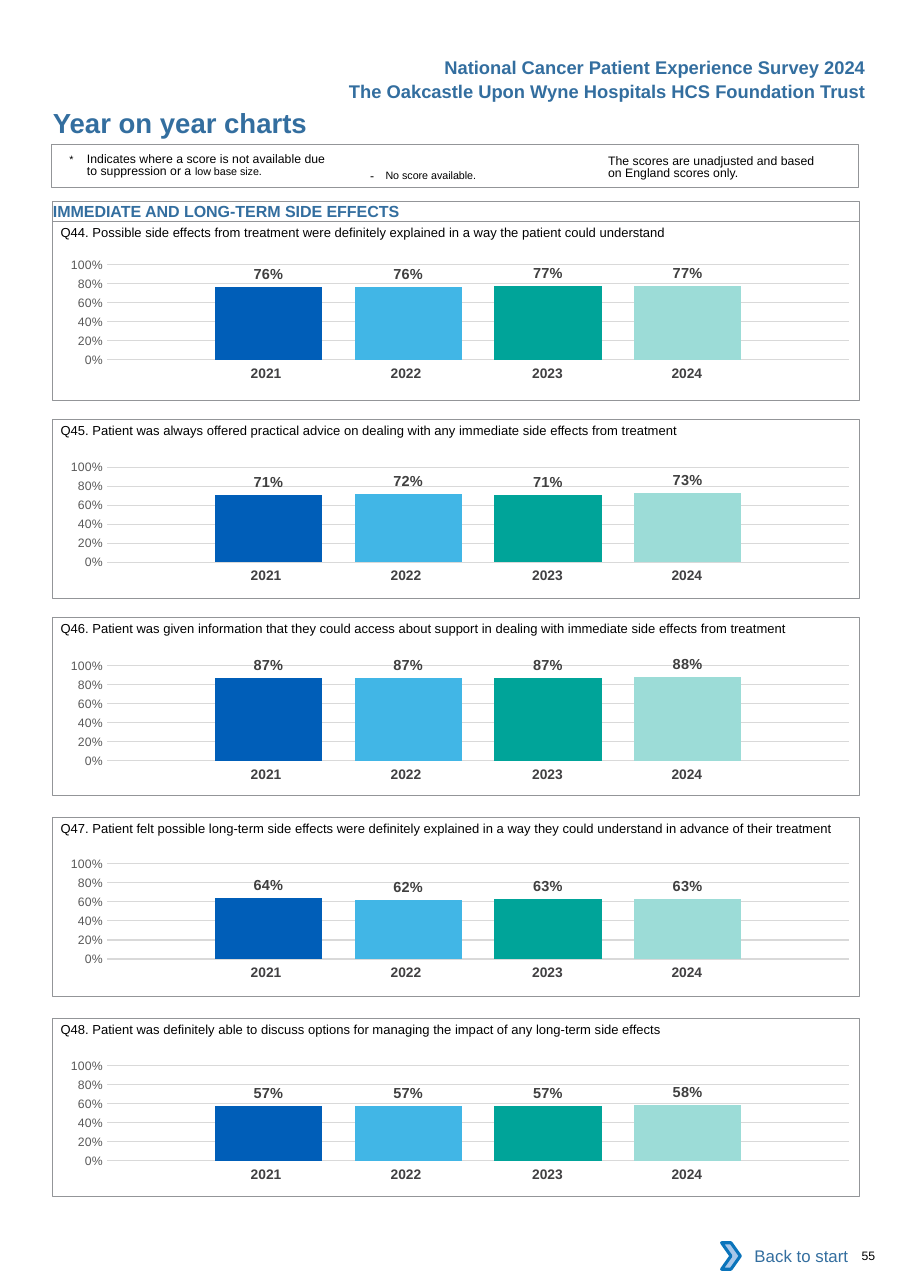
from lxml import etree
from pptx import Presentation
from pptx.chart.data import CategoryChartData
from pptx.dml.color import RGBColor
from pptx.enum.chart import XL_CHART_TYPE as ChartType, XL_LABEL_POSITION as LabelPosition
from pptx.enum.chart import XL_TICK_MARK as TickMark
from pptx.enum.shapes import MSO_SHAPE as Preset
from pptx.enum.text import MSO_ANCHOR as Anchor, PP_ALIGN as Align
from pptx.oxml.ns import qn
from pptx.util import Inches, Pt

BLUE = RGBColor(0x33, 0x6E, 0x9F)
BLACK = RGBColor(0, 0, 0)
WHITE = RGBColor(0xFF, 0xFF, 0xFF)
FRAME_GREY = RGBColor(0x93, 0x95, 0x98)
YEAR_GREY = RGBColor(0x41, 0x40, 0x42)
LABEL_GREY = RGBColor(0x40, 0x40, 0x40)
AXIS_GREY = RGBColor(0x59, 0x59, 0x59)
GRID_GREY = RGBColor(0xD9, 0xD9, 0xD9)
ARROW_FILL = RGBColor(0xA8, 0xC7, 0xE9)
ARROW_LINE = RGBColor(0x0A, 0x74, 0xBB)
YEAR_COLORS = [RGBColor(0x00, 0x5E, 0xB8), RGBColor(0x41, 0xB6, 0xE6),
               RGBColor(0x00, 0xA4, 0x99), RGBColor(0x9C, 0xDC, 0xD7)]

FRAME_LEFT, FRAME_WIDTH, PANEL_HEIGHT = 0.48, 7.32, 1.62
YEARS = ["2021", "2022", "2023", "2024"]
YEAR_WIDTHS = [1.27, 1.27, 1.34, 1.27]
YEAR_RIGHT_MARGINS = [0, 0, 0.04, 0.12]
NO_STYLE = "{2D5ABB26-0587-4C30-8999-92F81FD0307C}"

# Panel top, chart offset, question, scores by year
PANELS = [
    (2.01, 0.21, "Q44. Possible side effects from treatment were definitely explained "
     "in a way the patient could understand", [0.76, 0.76, 0.77, 0.77]),
    (3.81, 0.25, "Q45. Patient was always offered practical advice on dealing with any "
     "immediate side effects from treatment", [0.71, 0.72, 0.71, 0.73]),
    (5.60, 0.26, "Q46. Patient was given information that they could access about support "
     "in dealing with immediate side effects from treatment", [0.87, 0.87, 0.87, 0.88]),
    (7.42, 0.24, "Q47. Patient felt possible long-term side effects were definitely explained "
     "in a way they could understand in advance of their treatment", [0.64, 0.62, 0.63, 0.63]),
    (9.24, 0.25, "Q48. Patient was definitely able to discuss options for managing the impact "
     "of any long-term side effects", [0.57, 0.57, 0.57, 0.58]),
]


def style_font(font, size, color, bold=False):
    font.name, font.size, font.bold = "Arial", Pt(size), bold
    font.color.rgb = color


def add_text(page, box, spans, color=BLACK, bold=False, align=Align.LEFT,
             anchor=Anchor.MIDDLE, wrap=True):
    """Place one paragraph; spans are (text, size) pairs."""
    frame = page.shapes.add_textbox(*map(Inches, box)).text_frame
    frame.word_wrap, frame.vertical_anchor = wrap, anchor
    frame.margin_left = frame.margin_right = frame.margin_top = frame.margin_bottom = 0
    para = frame.paragraphs[0]
    para.alignment = align
    for text, size in spans:
        span = para.add_run()
        span.text = text
        style_font(span.font, size, color, bold)
    return para


def add_frame(page, box, width=0.5):
    frame = page.shapes.add_shape(Preset.RECTANGLE, *map(Inches, box))
    frame.shadow.inherit = False
    frame.fill.background()
    frame.line.color.rgb = FRAME_GREY
    frame.line.width = Pt(width)


def add_header(page, left, top, width):
    titles = ["National Cancer Patient Experience Survey 2024",
              "The Oakcastle Upon Wyne Hospitals HCS Foundation Trust"]
    for row, title in enumerate(titles):
        add_text(page, (left, top + row * 0.22, width, 0.3), [(title, 12)],
                 BLUE, True, Align.RIGHT, wrap=False)
    add_text(page, (FRAME_LEFT, top + 0.5, 4.5, 0.3), [("Year on year charts", 18)], BLUE, True)


def add_legend(page, left, top, width, height):
    add_frame(page, (left, top, width, height), 0.75)
    suppressed = add_text(page, (left + 0.16, top + 0.08, 2.37, 0.25),
                          [("*\t", 7), ("Indicates where a score is not available due to "
                                        "suppression or a ", 8), ("low base size.", 7)],
                          anchor=Anchor.TOP)
    properties = suppressed._p.get_or_add_pPr()
    properties.set("marL", str(Inches(0.16)))
    properties.set("indent", str(-Inches(0.16)))
    add_text(page, (left + 2.89, top + 0.18, 0.14, 0.2), [("-", 8)])
    add_text(page, (left + 3.03, top + 0.18, 1.5, 0.2), [("No score available.", 7)])
    unadjusted = add_text(page, (left + 5.05, top + 0.1, 1.95, 0.25),
                          [("The scores are unadjusted and based on England scores only.", 8)],
                          anchor=Anchor.TOP)
    for para in (suppressed, unadjusted):
        para.line_spacing = Pt(8.1)


def set_plot_area(chart, x, y, width, height):
    plot_area = chart._chartSpace.chart.plotArea
    for old in plot_area.findall(qn("c:layout")):
        plot_area.remove(old)
    layout = etree.Element(qn("c:layout"))
    manual = etree.SubElement(layout, qn("c:manualLayout"))
    settings = [("layoutTarget", "inner"), ("xMode", "edge"), ("yMode", "edge"),
                ("x", x), ("y", y), ("w", width), ("h", height)]
    for tag, value in settings:
        etree.SubElement(manual, qn("c:" + tag)).set("val", str(value))
    plot_area.insert(0, layout)


def add_score_chart(page, box, scores):
    data = CategoryChartData(number_format="0%")
    data.categories = ["1"]
    for number, score in enumerate(scores, 1):
        data.add_series(f"Series {number}", [score])
    chart = page.shapes.add_chart(ChartType.COLUMN_CLUSTERED, *map(Inches, box), data).chart
    chart.has_legend = chart.has_title = False
    chart.font.name, chart.font.size = "Calibri", Pt(10)
    chart.font.color.rgb = BLACK
    set_plot_area(chart, 0.08, 0.14, 0.92, 0.67)

    chart.category_axis.visible = False
    axis = chart.value_axis
    axis.minimum_scale, axis.maximum_scale, axis.major_unit = 0, 1, 0.2
    axis.major_tick_mark = axis.minor_tick_mark = TickMark.NONE
    axis.format.line.fill.background()
    axis.major_gridlines.format.line.color.rgb = GRID_GREY
    axis.major_gridlines.format.line.width = Pt(0.75)
    axis.tick_labels.number_format = "0%"
    axis.tick_labels.number_format_is_linked = False
    style_font(axis.tick_labels.font, 8, AXIS_GREY)

    plot = chart.plots[0]
    plot.gap_width, plot.overlap, plot.vary_by_categories = 200, -30, False
    for series, color in zip(plot.series, YEAR_COLORS):
        series.format.fill.solid()
        series.format.fill.fore_color.rgb = color
        labels = series.data_labels
        labels.show_value, labels.position = True, LabelPosition.OUTSIDE_END
        labels.number_format, labels.number_format_is_linked = "0%", False
        style_font(labels.font, 9.5, LABEL_GREY, True)


def add_year_table(page, left, top):
    box = (left, top, sum(YEAR_WIDTHS), 0.27)
    table = page.shapes.add_table(1, len(YEARS), *map(Inches, box)).table
    table.first_row = table.horz_banding = False
    table._tbl.tblPr.find(qn("a:tableStyleId")).text = NO_STYLE
    for index, year in enumerate(YEARS):
        table.columns[index].width = Inches(YEAR_WIDTHS[index])
        cell = table.cell(0, index)
        cell.fill.background()
        cell.margin_right = Inches(YEAR_RIGHT_MARGINS[index])
        para = cell.text_frame.paragraphs[0]
        para.text, para.alignment = year, Align.CENTER
        style_font(para.runs[0].font, 9, YEAR_GREY, True)


def add_panel(page, left, top, chart_offset, question, scores):
    chart_top = top + chart_offset
    add_score_chart(page, (left - 0.09, chart_top, FRAME_WIDTH, 1.29), scores)
    add_year_table(page, left + 1.25, chart_top + 1.05)
    add_text(page, (left + 0.07, top, FRAME_WIDTH - 0.07, 0.2), [(question, 8.5)])
    add_frame(page, (left, top, FRAME_WIDTH, PANEL_HEIGHT))


def add_footer(page, left, top):
    arrow = page.shapes.add_shape(Preset.CHEVRON, *map(Inches, (left, top, 0.17, 0.24)))
    arrow.shadow.inherit = False
    arrow.fill.solid()
    arrow.fill.fore_color.rgb = ARROW_FILL
    arrow.line.color.rgb = ARROW_LINE
    arrow.line.width = Pt(2)
    add_text(page, (left + 0.2, top, 0.95, 0.24), [("Back to start", 11)], BLUE, align=Align.RIGHT)
    add_text(page, (left + 1.27, top, 0.4, 0.24), [("55", 8)])


def main():
    deck = Presentation()
    deck.slide_width, deck.slide_height = Inches(8.26), Inches(11.69)
    page = deck.slides.add_slide(deck.slide_layouts[6])
    page.background.fill.solid()
    page.background.fill.fore_color.rgb = WHITE

    add_header(page, 2.93, 0.46, 4.93)
    add_legend(page, 0.47, 1.31, FRAME_WIDTH, 0.39)
    # Section heading
    heading_box = (FRAME_LEFT, 1.83, FRAME_WIDTH, 0.18)
    add_frame(page, heading_box)
    add_text(page, heading_box, [("IMMEDIATE AND LONG-TERM SIDE EFFECTS", 10.5)], BLUE, True)
    for panel in PANELS:
        add_panel(page, FRAME_LEFT, *panel)
    add_footer(page, 6.55, 11.28)
    deck.save("out.pptx")


if __name__ == "__main__":
    main()
